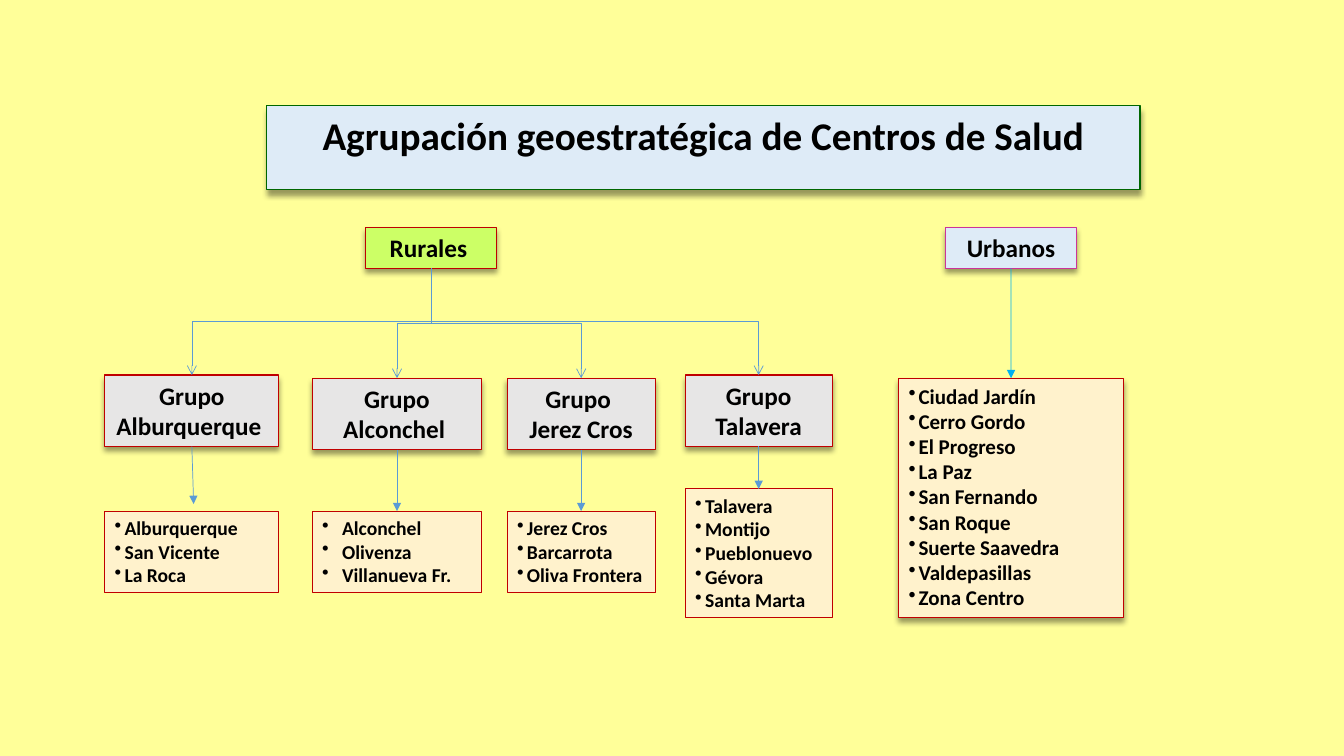
from dataclasses import dataclass

from lxml.etree import SubElement
from pptx import Presentation
from pptx.dml.color import RGBColor
from pptx.enum.shapes import MSO_CONNECTOR as LINK, MSO_SHAPE as SHAPE
from pptx.enum.text import MSO_ANCHOR as ANCHOR, MSO_AUTO_SIZE as FIT, PP_ALIGN as ALIGN
from pptx.oxml.ns import qn
from pptx.util import Cm, Pt

BLACK = RGBColor(0x00, 0x00, 0x00)
YELLOW = RGBColor(0xFF, 0xFF, 0x99)
PALE_BLUE = RGBColor(0xDE, 0xEB, 0xF7)
LIME = RGBColor(0xCC, 0xFF, 0x66)
GREY = RGBColor(0xE7, 0xE6, 0xE6)
CREAM = RGBColor(0xFF, 0xF2, 0xCC)
GREEN = RGBColor(0x00, 0x66, 0x00)
RED = RGBColor(0xC0, 0x00, 0x00)
PINK = RGBColor(0xCC, 0x33, 0x99)
BLUE = RGBColor(0x5B, 0x9B, 0xD5)
SKY = RGBColor(0x00, 0xB0, 0xF0)

TOP, BOTTOM = 0, 2
GROUP_HEIGHT = 1.8


@dataclass
class Group:
    """A rural group: its place in cm, its heading and its health centres."""
    left: float
    top: float
    width: float
    heading: tuple
    list_top: float
    list_height: float
    centres: tuple
    indent: float = 0.25


GROUPS = (
    Group(2.64, 9.45, 4.39, ("Grupo Alburquerque ",), 12.88, 2.06,
          ("Alburquerque", "San Vicente", "La Roca")),
    Group(7.87, 9.53, 4.27, ("Grupo Alconchel ",), 12.88, 2.06,
          ("Alconchel", "Olivenza", "Villanueva Fr."), 0.5),
    Group(12.78, 9.53, 3.73, ("Grupo ", "Jerez Cros"), 12.88, 2.06,
          ("Jerez Cros", "Barcarrota", "Oliva Frontera")),
    Group(17.27, 9.45, 3.7, ("Grupo", "Talavera"), 12.32, 3.25,
          ("Talavera", "Montijo", "Pueblonuevo", "Gévora", "Santa Marta")),
)
URBAN_CENTRES = ("Ciudad Jardín", "Cerro Gordo", "El Progreso", "La Paz", "San Fernando",
                 "San Roque", "Suerte Saavedra", "Valdepasillas", "Zona Centro")


def place(shape, left, top, width, height):
    """Move a shape to a place given in cm."""
    shape.left, shape.top = Cm(left), Cm(top)
    shape.width, shape.height = Cm(width), Cm(height)


def add_shadow(shape):
    """Give a shape a soft shadow below it."""
    effects = shape.element.spPr.find(qn("a:effectLst"))
    outer = SubElement(effects, qn("a:outerShdw"), blurRad=str(Pt(4)), dist=str(Pt(3)),
                       dir="5400000", algn="t", rotWithShape="0")
    color = SubElement(outer, qn("a:srgbClr"), val=str(BLACK))
    SubElement(color, qn("a:alpha"), val="40000")


def add_bullet(para, indent):
    """Give a paragraph a bullet with a hanging indent in cm."""
    properties = para._p.get_or_add_pPr()
    properties.set("marL", str(Cm(indent)))
    properties.set("indent", str(-Cm(indent)))
    SubElement(properties, qn("a:buChar"), char="•")


def dress(box, lines, size, fill, edge, shadow=True, indent=None):
    """Format a box and write its lines, centred or as bullets."""
    box.fill.solid()
    box.fill.fore_color.rgb = fill
    box.line.color.rgb = edge
    box.line.width = Pt(0.75)
    box.shadow.inherit = False
    if shadow:
        add_shadow(box)
    frame = box.text_frame
    frame.word_wrap = True
    frame.auto_size = FIT.SHAPE_TO_FIT_TEXT
    frame.vertical_anchor = ANCHOR.TOP
    for number, line in enumerate(lines):
        para = frame.add_paragraph() if number else frame.paragraphs[0]
        para.alignment = ALIGN.CENTER if indent is None else ALIGN.LEFT
        if indent is not None:
            add_bullet(para, indent)
        span = para.add_run()
        span.text = line
        span.font.name = "Calibri"
        span.font.size = Pt(size)
        span.font.bold = True
        span.font.color.rgb = BLACK
    return box


def add_box(page, area, *content, **options):
    """Add a rectangle at an area in cm and dress it."""
    box = page.shapes.add_shape(SHAPE.RECTANGLE, *map(Cm, area))
    return dress(box, *content, **options)


def finish_arrow(arrow, color, head):
    """Set the line and the arrowhead of a connector."""
    arrow.line.color.rgb = color
    arrow.line.width = Pt(0.5)
    properties = arrow.element.spPr
    SubElement(properties.find(qn("a:ln")), qn("a:tailEnd"), type=head)
    SubElement(properties, qn("a:effectLst"))


def add_arrow(page, upper, lower, color):
    """Join two boxes with a straight arrow."""
    arrow = page.shapes.add_connector(LINK.STRAIGHT, 0, 0, 0, 0)
    arrow.begin_connect(upper, BOTTOM)
    arrow.end_connect(lower, TOP)
    finish_arrow(arrow, color, "triangle")
    return arrow


def add_branch(page, parent, child):
    """Join two boxes with an elbow that leaves and arrives vertically."""
    start_x, start_y = parent.left + parent.width // 2, parent.top + parent.height
    end_x, end_y = child.left + child.width // 2, child.top
    middle_x, middle_y = (start_x + end_x) // 2, (start_y + end_y) // 2
    drop, reach = (end_y - start_y) // 2, abs(end_x - start_x) // 2
    side = 1 if end_x > start_x else -1
    elbow = page.shapes.add_connector(LINK.ELBOW, middle_x + side * drop, middle_y - reach,
                                      middle_x - side * drop, middle_y + reach)
    turn = 270 if side > 0 else 90
    elbow.element.spPr.find(qn("a:xfrm")).set("rot", str(turn * 60000))
    finish_arrow(elbow, BLUE, "arrow")


def add_side_branch(page, parent, child):
    """Run an elbow from the trunk under the parent across and down to the child."""
    level = (parent.top + parent.height + child.top) // 2
    elbow = page.shapes.add_connector(LINK.ELBOW, Cm(10.72), level,
                                      child.left + child.width // 2, child.top)
    elbow.element.spPr.find(qn("a:prstGeom")).set("prst", "bentConnector2")
    finish_arrow(elbow, BLUE, "arrow")


def add_title(page, area):
    """Place and format the title."""
    title = page.shapes.title
    place(title, *area)
    dress(title, ("Agrupación geoestratégica de Centros de Salud",), 28, PALE_BLUE, GREEN)


def add_rural(page, area):
    """Draw the rural heading with its four groups and their lists."""
    rural = add_box(page, area, ("Rurales ",), 18, LIME, RED)
    for group in GROUPS:
        heading = add_box(page, (group.left, group.top, group.width, GROUP_HEIGHT),
                          group.heading, 18, GREY, RED)
        centres = add_box(page, (group.left, group.list_top, group.width, group.list_height),
                          group.centres, 14, CREAM, RED, shadow=False, indent=group.indent)
        branch = add_side_branch if group is GROUPS[-1] else add_branch
        branch(page, rural, heading)
        if group is GROUPS[0]:
            arrow = page.shapes.add_connector(LINK.STRAIGHT, 0, 0, Cm(4.88), Cm(12.7))
            arrow.begin_connect(heading, BOTTOM)
            finish_arrow(arrow, BLUE, "triangle")
        else:
            add_arrow(page, heading, centres, BLUE)


def add_urban(page, area):
    """Draw the urban heading with the list centred below it."""
    left, top, width, height = area
    urban = add_box(page, area, ("Urbanos",), 18, PALE_BLUE, PINK)
    list_width = 5.66
    centres = add_box(page, (left + (width - list_width) / 2, top + 3.79, list_width, 6.02),
                      URBAN_CENTRES, 15, CREAM, RED, indent=0.25)
    add_arrow(page, urban, centres, SKY)


def main():
    """Build and save the deck."""
    deck = Presentation()
    deck.slide_width, deck.slide_height = Cm(33.87), Cm(19.05)
    page = deck.slides.add_slide(deck.slide_layouts[5])
    page.background.fill.solid()
    page.background.fill.fore_color.rgb = YELLOW
    add_title(page, (6.71, 2.67, 22.02, 1.45))
    add_rural(page, (9.22, 5.74, 3.3, 1.02))
    add_urban(page, (23.83, 5.74, 3.3, 1.02))
    deck.save("out.pptx")


if __name__ == "__main__":
    main()
